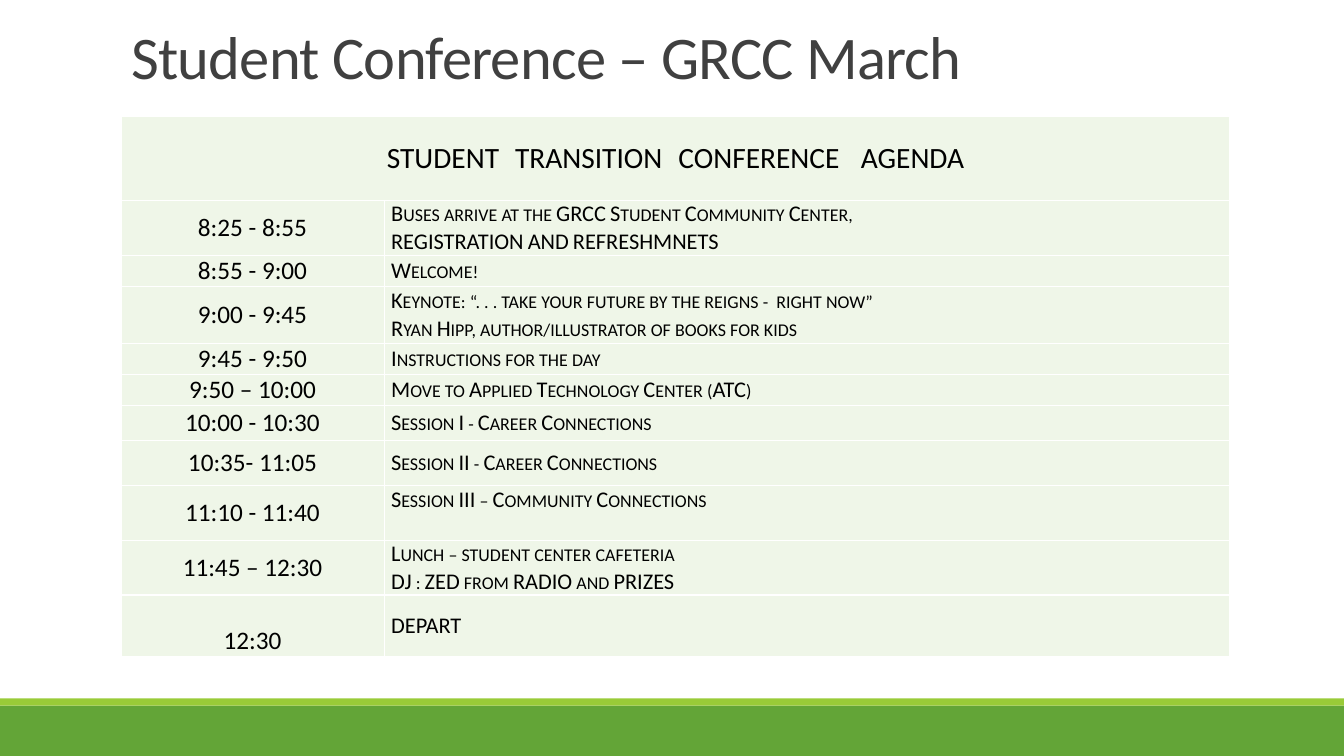
from lxml import etree
from pptx import Presentation
from pptx.dml.color import RGBColor
from pptx.enum.shapes import MSO_SHAPE
from pptx.enum.text import MSO_ANCHOR, MSO_AUTO_SIZE, PP_ALIGN
from pptx.oxml.ns import qn
from pptx.util import Inches, Pt

RECT = MSO_SHAPE.RECTANGLE
TOP, MID, LOW = MSO_ANCHOR.TOP, MSO_ANCHOR.MIDDLE, MSO_ANCHOR.BOTTOM
LEFT, MIDDLE = PP_ALIGN.LEFT, PP_ALIGN.CENTER
FIT_NONE = MSO_AUTO_SIZE.NONE

HEX = {"green": "63A537", "lime": "99CB38", "pale": "EFF6E8",
       "grey": "404040", "black": "000000", "white": "FFFFFF"}

HEAD = "STUDENT   TRANSITION   CONFERENCE    AGENDA"
# Row height, time, time anchor, lines of the event, event anchor
AGENDA = [
    (0.54, "8:25 - 8:55", MID,
     ["Buses arrive at the GRCC Student Community Center,",
      "REGISTRATION AND REFRESHMNETS"], MID),
    (0.3, "8:55 - 9:00", MID, ["Welcome!"], MID),
    (0.57, "9:00 - 9:45", MID,
     ["Keynote: “. . . take your future by the reigns -  right now”",
      "Ryan Hipp, author/illustrator of books for kids"], MID),
    (0.3, "9:45 - 9:50", MID, ["Instructions for the day"], MID),
    (0.3, "9:50 – 10:00", MID,
     ["Move to Applied Technology Center (ATC)"], MID),
    (0.35, "10:00 - 10:30", MID, ["Session I - Career Connections"], MID),
    (0.45, "10:35- 11:05", MID, ["Session II - Career Connections"], MID),
    (0.54, "11:10 - 11:40", MID, ["Session III – Community Connections"], TOP),
    (0.54, "11:45 – 12:30", MID,
     ["Lunch – student center cafeteria",
      "DJ : ZED from RADIO and PRIZES"], MID),
    (0.61, "12:30", LOW, ["DEPART"], MID),
]


class Deck:
    """Holds the font and the current slide, and draws each kind of element."""

    def __init__(self, font):
        self.font = font
        self.prs = Presentation()
        self.prs.slide_width = Inches(13.33)
        self.prs.slide_height = Inches(7.5)
        self.slide = self.prs.slides.add_slide(self.prs.slide_layouts[5])

    def color(self, name):
        return RGBColor.from_string(HEX[name])

    def run(self, para, text, size, color, **marks):
        """Adds one run; marks are extra run attributes such as cap or spc."""
        run = para.add_run()
        run.text = text
        run.font.name = self.font
        run.font.size = Pt(size)
        run.font.bold = False
        run.font.color.rgb = self.color(color)
        for key, value in marks.items():
            run.font._element.set(key, value)

    def bar(self, top, height, color):
        bar = self.slide.shapes.add_shape(
            RECT, 0, Inches(top), self.prs.slide_width, Inches(height))
        bar.shadow.inherit = False
        bar.fill.solid()
        bar.fill.fore_color.rgb = self.color(color)
        bar.line.fill.background()

    def title(self, text, left, top, width, height):
        title = self.slide.shapes.title
        title.left, title.top = Inches(left), Inches(top)
        title.width, title.height = Inches(width), Inches(height)
        frame = title.text_frame
        frame.auto_size = FIT_NONE
        frame.word_wrap = True
        frame.vertical_anchor = LOW
        para = frame.paragraphs[0]
        para.alignment = LEFT
        para.line_spacing = 0.85
        self.run(para, text, 43.2, "grey", spc="-50")

    def border(self, cell):
        props = cell._tc.get_or_add_tcPr()
        for spot, side in enumerate(("lnL", "lnR", "lnT", "lnB")):
            line = etree.Element(qn("a:" + side), w=str(Pt(1)))
            fill = etree.SubElement(line, qn("a:solidFill"))
            etree.SubElement(fill, qn("a:srgbClr"), val=HEX["white"])
            props.insert(spot, line)

    def cell(self, cell, lines, size, align, anchor, **marks):
        cell.margin_left = cell.margin_right = Inches(0.07)
        cell.margin_top = cell.margin_bottom = 0
        cell.vertical_anchor = anchor
        frame = cell.text_frame
        for i, text in enumerate(lines):
            para = frame.add_paragraph() if i else frame.paragraphs[0]
            para.alignment = align
            self.run(para, text, size, "black", **marks)

    def table(self, left, top, widths, heights):
        grid = self.slide.shapes.add_table(
            len(heights), len(widths), Inches(left), Inches(top),
            Inches(sum(widths)), Inches(sum(heights))).table
        for col, width in zip(grid.columns, widths):
            col.width = Inches(width)
        for row, height in zip(grid.rows, heights):
            row.height = Inches(height)
            for cell in row.cells:
                cell.fill.solid()
                cell.fill.fore_color.rgb = self.color("pale")
                self.border(cell)
        return grid


def main():
    deck = Deck("Calibri")
    deck.bar(7, 0.5, "green")
    deck.bar(6.93, 0.07, "lime")
    deck.title("Student Conference – GRCC March", 1.2, 0.31, 11, 0.65)

    grid = deck.table(1.2, 1.15, [2.61, 8.39],
                      [0.84] + [row[0] for row in AGENDA])
    grid.cell(0, 0).merge(grid.cell(0, 1))
    deck.cell(grid.cell(0, 0), [HEAD], 21, MIDDLE, MID, cap="small")
    for i, (_, time, hold, lines, anchor) in enumerate(AGENDA, 1):
        deck.cell(grid.cell(i, 0), [time], 18, MIDDLE, hold)
        deck.cell(grid.cell(i, 1), lines, 16, LEFT, anchor, cap="small")
    deck.prs.save("out.pptx")


if __name__ == "__main__":
    main()
